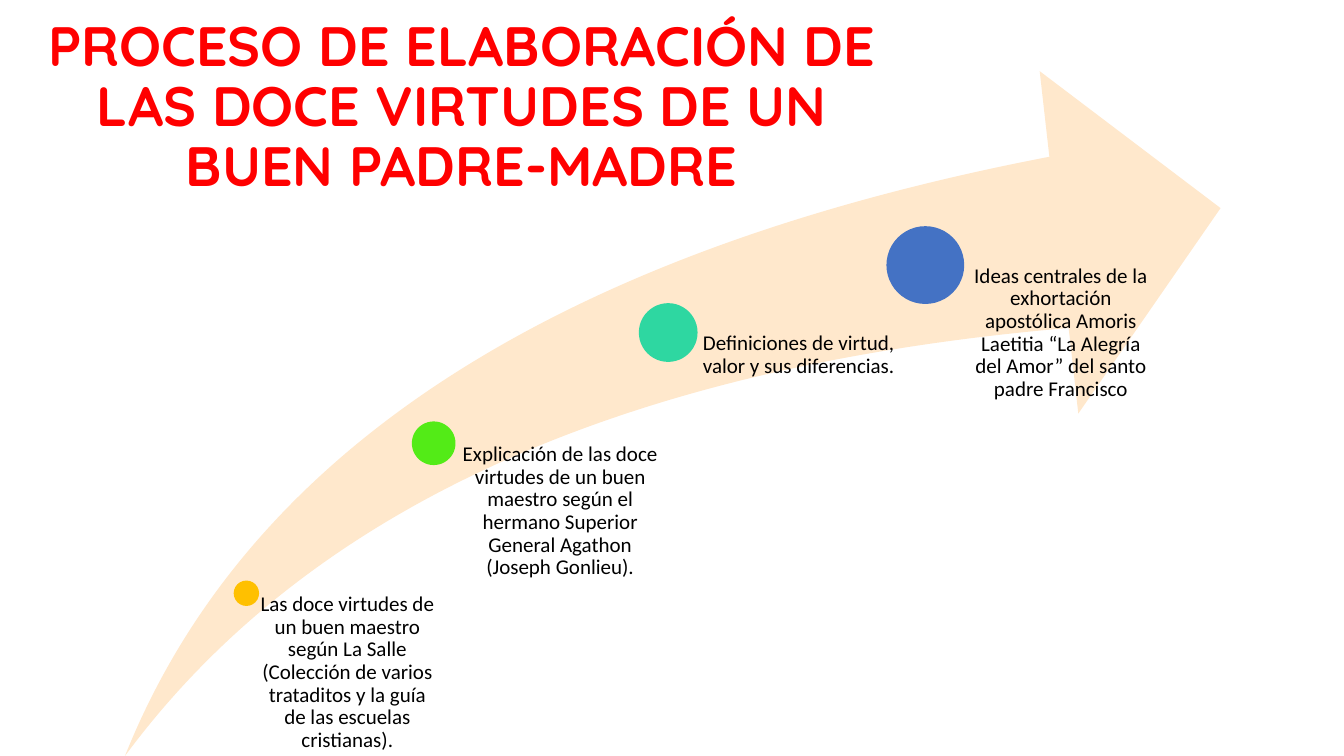
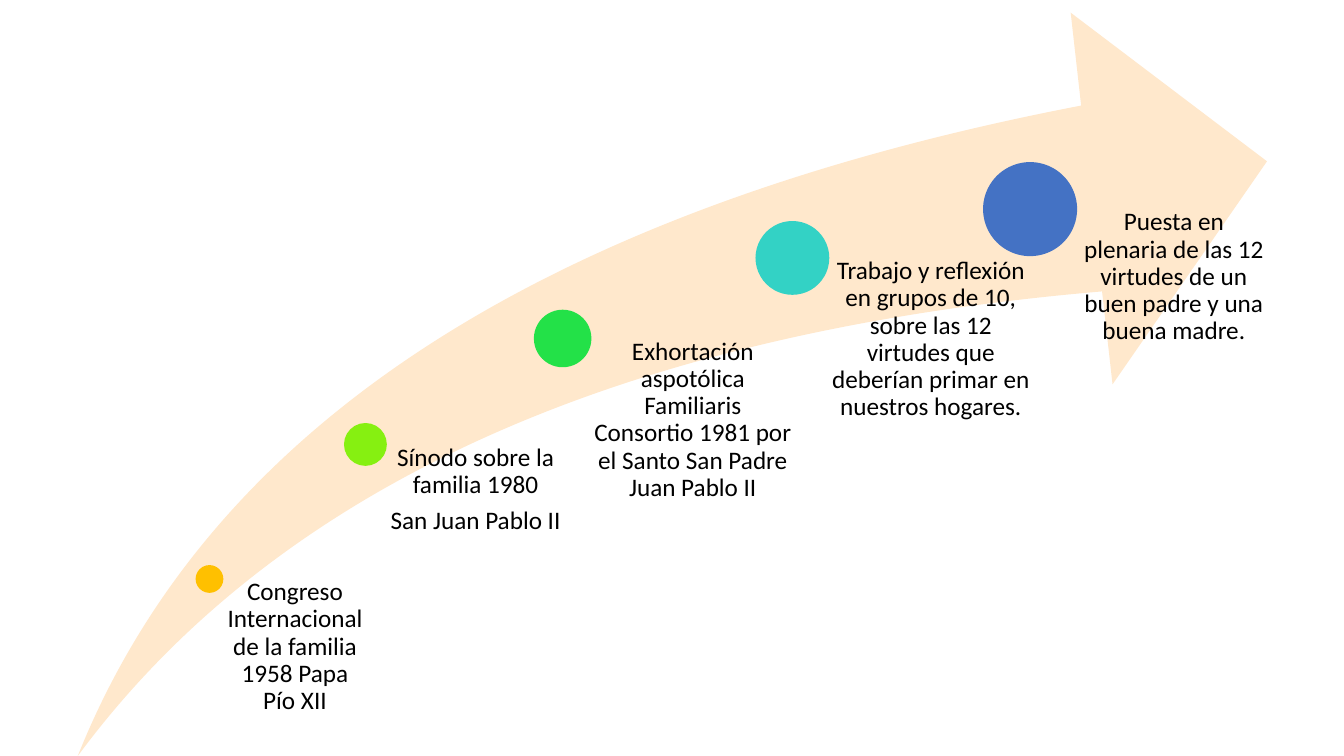
from pptx import Presentation
from pptx import util as u
from pptx.dml.color import RGBColor
from pptx.enum import shapes, text

Cm, Pt = u.Cm, u.Pt
WIDTH, HEIGHT = 33.87, 19.05
ARROW_RATIO = 1.6      # width to height of the swoosh
INDENT_RATIO = 0.53    # text indent to dot diameter
TITLE_ONLY, BLANK = 5, 6

COLORS = {
    "title": "FF0000",
    "text": "000000",
    "arrow": "FFE8CC",
    "amber": "FFC000",
    "lime": "86F011",
    "grass": "53EB17",
    "green": "23E148",
    "mint": "2ED7A1",
    "turquoise": "33D2C5",
    "blue": "4472C4",
}

# Each step: centre x, centre y, dot diameter, text width, colour, paragraphs
SLIDES = [
    {
        "title": "PROCESO DE ELABORACIÓN DE LAS DOCE VIRTUDES DE UN BUEN PADRE-MADRE",
        "arrow": (3.15, 27.61),
        "size": 15,
        "steps": [
            (6.21, 14.95, 0.64, 4.75, "amber",
             ["Las doce virtudes de un buen maestro según La Salle (Colección de "
              "varios trataditos y la guía de las escuelas cristianas)."]),
            (10.93, 11.17, 1.1, 5.79, "grass",
             ["Explicación de las doce virtudes de un buen maestro según el "
              "hermano Superior General Agathon (Joseph Gonlieu)."]),
            (16.84, 8.38, 1.48, 5.79, "mint",
             ["Definiciones de virtud, valor y sus diferencias."]),
            (23.32, 6.68, 1.96, 5.79, "blue",
             ["Ideas centrales de la exhortación apostólica Amoris Laetitia "
              "“La Alegría del Amor” del santo padre Francisco"]),
        ],
    },
    {
        "title": None,
        "arrow": (1.96, 29.97),
        "size": 18,
        "steps": [
            (5.28, 14.59, 0.7, 3.94, "amber",
             ["Congreso Internacional de la familia 1958 Papa Pío XII"]),
            (9.21, 11.2, 1.08, 4.98, "lime",
             ["Sínodo sobre la familia 1980", "San Juan Pablo II"]),
            (14.18, 8.53, 1.45, 5.79, "green",
             ["Exhortación aspotólica Familiaris Consortio 1981 por el Santo "
              "San Padre Juan Pablo II"]),
            (19.97, 6.5, 1.86, 5.99, "turquoise",
             ["Trabajo y reflexión en grupos de 10, sobre las 12 virtudes que "
              "deberían primar en nuestros hogares."]),
            (25.96, 5.27, 2.37, 5.99, "blue",
             ["Puesta en plenaria de las 12 virtudes de un buen padre y una "
              "buena madre."]),
        ],
    },
]


def write(tf, paragraphs, size, font="Calibri", color="text", bold=False, after=0):
    tf.word_wrap = True
    tf.auto_size = text.MSO_AUTO_SIZE.NONE
    for i, line in enumerate(paragraphs):
        p = tf.paragraphs[0] if i == 0 else tf.add_paragraph()
        p.alignment = text.PP_ALIGN.CENTER
        p.line_spacing = 0.9
        p.space_after = Pt(after)
        r = p.add_run()
        r.text = line
        r.font.name, r.font.size, r.font.bold = font, Pt(size), bold
        r.font.color.rgb = RGBColor.from_string(COLORS[color])


def add_filled(s, kind, left, top, width, height, color):
    sp = s.shapes.add_shape(kind, Cm(left), Cm(top), Cm(width), Cm(height))
    sp.shadow.inherit = False
    sp.fill.solid()
    sp.fill.fore_color.rgb = RGBColor.from_string(COLORS[color])
    sp.line.fill.background()
    return sp


prs = Presentation()
prs.slide_width, prs.slide_height = Cm(WIDTH), Cm(HEIGHT)

for content in SLIDES:
    layout = TITLE_ONLY if content["title"] else BLANK
    s = prs.slides.add_slide(prs.slide_layouts[layout])

    if content["title"]:
        title = s.shapes.title
        title.left, title.top = Cm(0.69), Cm(0.43)
        title.width, title.height = Cm(21.89), Cm(4.62)
        title.text_frame.vertical_anchor = text.MSO_ANCHOR.MIDDLE
        write(title.text_frame, [content["title"]], 39.6,
              font="Quicksand", color="title", bold=True)

    left, width = content["arrow"]
    height = width / ARROW_RATIO
    arrow = add_filled(s, shapes.MSO_SHAPE.SWOOSH_ARROW,
                       left, HEIGHT - height, width, height, "arrow")
    arrow.adjustments[0] = arrow.adjustments[1] = 0.25

    # Each label starts at its dot's centre and runs to the slide bottom
    for x, y, dot, label_width, color, paragraphs in content["steps"]:
        add_filled(s, shapes.MSO_SHAPE.OVAL, x - dot / 2, y - dot / 2, dot, dot, color)
        label = s.shapes.add_textbox(Cm(x), Cm(y), Cm(label_width), Cm(HEIGHT - y))
        tf = label.text_frame
        tf.margin_left = Cm(dot * INDENT_RATIO)
        tf.margin_top = tf.margin_right = tf.margin_bottom = 0
        write(tf, paragraphs, content["size"], after=0.35 * content["size"])

prs.save("out.pptx")
